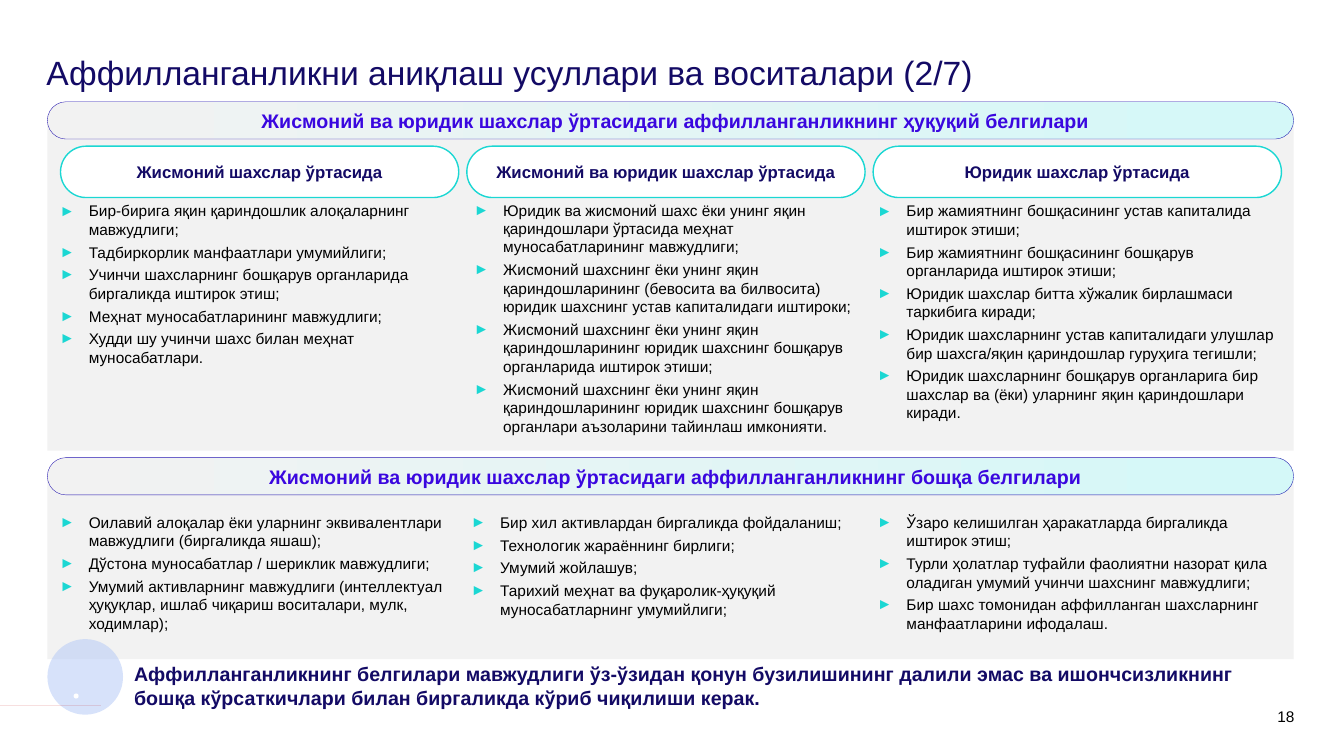
import dataclasses
import typing

import lxml.etree
import pptx
import pptx.dml.color
import pptx.enum.shapes
import pptx.enum.text
import pptx.oxml.ns
import pptx.util

Inches = pptx.util.Inches
Pt = pptx.util.Pt
qn = pptx.oxml.ns.qn
Align = pptx.enum.text.PP_ALIGN
Kind = pptx.enum.shapes.MSO_SHAPE
Point = tuple[float, float]
Box = tuple[float, float, float, float]

HUES = {
    "navy": "130A65", "violet": "3A07DF", "edge": "2112AE", "teal": "1BD7D3",
    "grey": "F2F2F2", "mint": "D4F8F8", "white": "FFFFFF", "black": "000000",
    "halo": "B1C7F7", "red": "C00000",
}
# Text formats: size, weight and colour
STYLES = {
    "title": {"size": Pt(24), "bold": False, "hue": "navy"},
    "band": {"size": Pt(14), "bold": True, "hue": "violet"},
    "card": {"size": Pt(12), "bold": True, "hue": "navy"},
    "body": {"size": Pt(11), "bold": False, "hue": "black"},
    "note": {"size": Pt(14), "bold": True, "hue": "navy"},
}
LEFT, WIDTH = 0.47, 12.36


@dataclasses.dataclass
class Column:
    box: Box
    items: list[str]


@dataclasses.dataclass
class Part:
    head: str
    top: float
    panel: Box
    cols: list[Column]


@dataclasses.dataclass
class Card:
    text: str
    left: float
    width: float


PARTS = [
    Part("Жисмоний ва юридик шахслар ўртасидаги аффилланганликнинг ҳуқуқий белгилари",
         1.01, (LEFT, 1.14, WIDTH, 3.33), [
             Column((0.59, 1.96, 3.95, 2.54), [
                 "Бир-бирига яқин қариндошлик алоқаларнинг мавжудлиги;",
                 "Тадбиркорлик манфаатлари умумийлиги;",
                 "Учинчи шахсларнинг бошқарув органларида биргаликда иштирок этиш;",
                 "Меҳнат муносабатларининг мавжудлиги;",
                 "Худди шу учинчи шахс билан меҳнат муносабатлари."]),
             Column((4.7, 1.95, 3.92, 2.55), [
                 "Юридик ва жисмоний шахс ёки унинг яқин қариндошлари ўртасида меҳнат муносабатларининг мавжудлиги;",
                 "Жисмоний шахснинг ёки унинг яқин қариндошларининг (бевосита ва билвосита) юридик шахснинг устав капиталидаги иштироки;",
                 "Жисмоний шахснинг ёки унинг яқин қариндошларининг юридик шахснинг бошқарув органларида иштирок этиши;",
                 "Жисмоний шахснинг ёки унинг яқин қариндошларининг юридик шахснинг бошқарув органлари аъзоларини тайинлаш имконияти."]),
             Column((8.7, 1.96, 4.02, 2.55), [
                 "Бир жамиятнинг бошқасининг устав капиталида иштирок этиши;",
                 "Бир жамиятнинг бошқасининг бошқарув органларида иштирок этиши;",
                 "Юридик шахслар битта хўжалик бирлашмаси таркибига киради;",
                 "Юридик шахсларнинг устав капиталидаги улушлар бир шахсга/яқин қариндошлар гуруҳига тегишли;",
                 "Юридик шахсларнинг бошқарув органларига бир шахслар ва (ёки) уларнинг яқин қариндошлари киради."]),
         ]),
    Part("Жисмоний ва юридик шахслар ўртасидаги аффилланганликнинг бошқа белгилари",
         4.54, (LEFT, 4.74, WIDTH, 1.8), [
             Column((0.59, 5.05, 3.95, 1.42), [
                 "Оилавий алоқалар ёки уларнинг эквивалентлари мавжудлиги (биргаликда яшаш);",
                 "Дўстона муносабатлар / шериклик мавжудлиги;",
                 "Умумий активларнинг мавжудлиги (интеллектуал ҳуқуқлар, ишлаб чиқариш воситалари, мулк, ходимлар);"]),
             Column((4.67, 5.05, 3.92, 1.43), [
                 "Бир хил активлардан биргаликда фойдаланиш;",
                 "Технологик жараённинг бирлиги;",
                 "Умумий жойлашув;",
                 "Тарихий меҳнат ва фуқаролик-ҳуқуқий муносабатларнинг умумийлиги;"]),
             Column((8.7, 5.05, 3.92, 1.43), [
                 "Ўзаро келишилган ҳаракатларда биргаликда иштирок этиш;",
                 "Турли ҳолатлар туфайли фаолиятни назорат қила оладиган умумий учинчи шахснинг мавжудлиги;",
                 "Бир шахс томонидан аффилланган шахсларнинг манфаатларини ифодалаш."]),
         ]),
]
CARDS = [
    Card("Жисмоний шахслар ўртасида", 0.6, 3.95),
    Card("Жисмоний ва юридик шахслар ўртасида", 4.63, 3.95),
    Card("Юридик шахслар ўртасида", 8.66, 4.05),
]
# Rounded corners of the warning sign, as cubic curves
CORNERS = [
    ((0.73, 6.52), (0.74, 6.5), (0.77, 6.5), (0.78, 6.52)),
    ((1.03, 6.95), (1.04, 6.97), (1.02, 7), (1, 7)),
    ((0.51, 7), (0.49, 7), (0.47, 6.97), (0.49, 6.95)),
]


def tint(name: str) -> pptx.dml.color.RGBColor:
    return pptx.dml.color.RGBColor.from_string(HUES[name])


def write(frame: typing.Any, lines: list[str], style: str, insets: Box,
          align: typing.Any = Align.LEFT, **space: typing.Any) -> None:
    frame.word_wrap = True
    for side, gap in zip(("left", "top", "right", "bottom"), insets):
        setattr(frame, f"margin_{side}", Inches(gap))
    for i, line in enumerate(lines):
        para = frame.paragraphs[0] if i == 0 else frame.add_paragraph()
        for key, value in {"alignment": align, **space}.items():
            setattr(para, key, value)
        run = para.add_run()
        run.text = line
        run.font.name = "Arial"
        for key, value in STYLES[style].items():
            if key == "hue":
                run.font.color.rgb = tint(value)
            else:
                setattr(run.font, key, value)


def paint(shape: typing.Any, fill: str, edge: str = "", weight: float = 0) -> None:
    shape.shadow.inherit = False
    shape.fill.solid()
    shape.fill.fore_color.rgb = tint(fill)
    if edge:
        shape.line.color.rgb = tint(edge)
        shape.line.width = Pt(weight)
    else:
        shape.line.fill.background()


def add_form(slide: typing.Any, kind: typing.Any, box: Box, fill: str,
             edge: str = "", weight: float = 0) -> typing.Any:
    shape = slide.shapes.add_shape(kind, *map(Inches, box))
    paint(shape, fill, edge, weight)
    return shape


def add_pill(slide: typing.Any, box: Box, text: str, style: str, edge: str,
             weight: float, insets: Box) -> typing.Any:
    pill = add_form(slide, Kind.ROUNDED_RECTANGLE, box, "white", edge, weight)
    pill.adjustments[0] = 0.5
    pill.text_frame.vertical_anchor = pptx.enum.text.MSO_ANCHOR.MIDDLE
    write(pill.text_frame, [text], style, insets, Align.CENTER)
    return pill


def add_text(slide: typing.Any, box: Box, lines: list[str], style: str,
             top: float = 0, **space: typing.Any) -> typing.Any:
    frame = slide.shapes.add_textbox(*map(Inches, box)).text_frame
    write(frame, lines, style, (0, top, 0, 0), **space)
    return frame


def add_list(slide: typing.Any, col: Column) -> None:
    frame = add_text(slide, col.box, col.items, "body", 0.04, space_after=Pt(3))
    for para in frame.paragraphs:
        props = para._p.get_or_add_pPr()
        props.set("marL", str(Inches(0.29)))
        props.set("indent", str(Inches(-0.29)))
        hue = lxml.etree.SubElement(props, qn("a:buClr"))
        lxml.etree.SubElement(hue, qn("a:srgbClr"), val=HUES["teal"])
        lxml.etree.SubElement(props, qn("a:buFont"), typeface="Arial")
        lxml.etree.SubElement(props, qn("a:buChar"), char="►")


def add_part(slide: typing.Any, part: Part) -> None:
    add_form(slide, Kind.RECTANGLE, part.panel, "grey")
    band = add_pill(slide, (LEFT, part.top, WIDTH, 0.37), part.head, "band",
                    "edge", 0.25, (0.2, 0.05, 0.1, 0.05))
    band.fill.gradient()
    band.fill.gradient_angle = 0
    for stop, hue, place in zip(band.fill.gradient_stops, ("grey", "mint"), (0, 1)):
        stop.color.rgb = tint(hue)
        stop.position = place
    for col in part.cols:
        add_list(slide, col)


def curve(a: Point, b: Point, c: Point, d: Point, steps: int = 8) -> list[Point]:
    def blend(t: float, k: int) -> float:
        u = 1 - t
        return u**3 * a[k] + 3 * u * u * t * b[k] + 3 * u * t * t * c[k] + t**3 * d[k]
    return [(blend(i / steps, 0), blend(i / steps, 1)) for i in range(steps + 1)]


def add_shape(slide: typing.Any, dots: list[Point], fill: str) -> None:
    form = slide.shapes.build_freeform(*dots[0], scale=float(Inches(1)))
    form.add_line_segments(dots[1:], close=True)
    paint(form.convert_to_shape(), fill)


def add_sign(slide: typing.Any) -> None:
    halo = add_form(slide, Kind.OVAL, (LEFT, 6.34, 0.75, 0.75), "halo")
    color = halo._element.spPr.find(qn("a:solidFill"))[0]
    lxml.etree.SubElement(color, qn("a:alpha"), val="50000")
    add_shape(slide, [dot for bend in CORNERS for dot in curve(*bend)], "red")
    add_shape(slide, [(0.73, 6.68), (0.78, 6.68), (0.78, 6.85), (0.74, 6.85)], "white")
    add_form(slide, Kind.OVAL, (0.73, 6.88, 0.05, 0.05), "white")


def main() -> None:
    deck = pptx.Presentation()
    deck.slide_width, deck.slide_height = Inches(13.33), Inches(7.5)
    slide = deck.slides.add_slide(deck.slide_layouts[6])
    # Title and page number
    add_text(slide, (0.46, 0.56, 12.38, 0.48),
             ["Аффилланганликни аниқлаш усуллари ва воситалари (2/7)"], "title",
             line_spacing=0.9)
    add_text(slide, (12.41, 7.02, 0.43, 0.16), ["18"], "body", align=Align.RIGHT)
    # Panels with their lists
    for part in PARTS:
        add_part(slide, part)
    for card in CARDS:
        add_pill(slide, (card.left, 1.45, card.width, 0.51), card.text, "card",
                 "teal", 1, (0.05, 0.05, 0.05, 0.05))
    # Warning
    add_sign(slide)
    add_text(slide, (1.33, 6.56, 11.51, 0.48), [
        "Аффилланганликнинг белгилари мавжудлиги ўз-ўзидан қонун бузилишининг далили эмас ва "
        "ишончсизликнинг бошқа кўрсаткичлари билан биргаликда кўриб чиқилиши керак."],
        "note", 0.01)
    deck.save("out.pptx")


if __name__ == "__main__":
    main()
